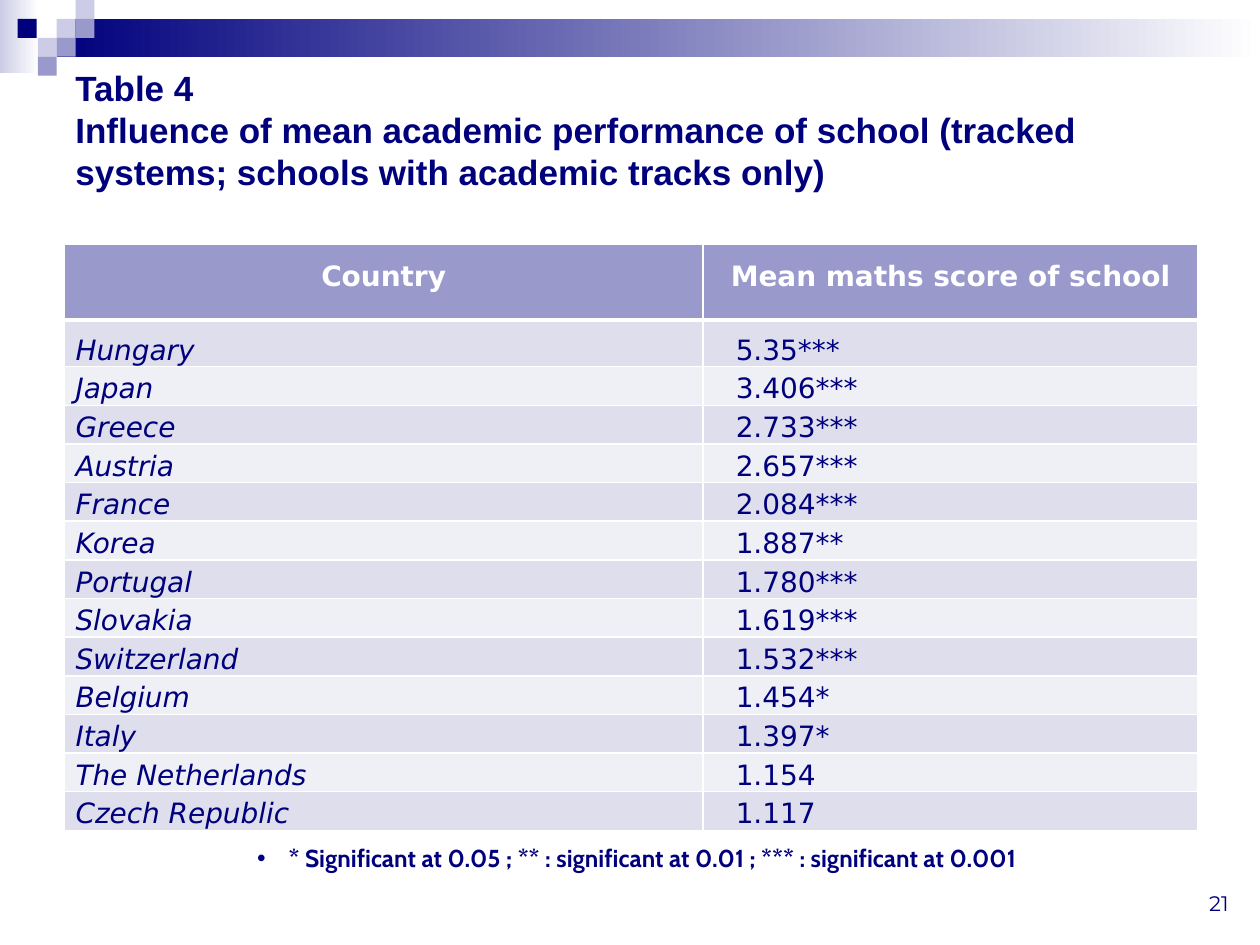
import pptx
import pptx.dml.color
import pptx.enum.shapes
import pptx.enum.text
import pptx.oxml
import pptx.oxml.ns
import pptx.util

Inches = pptx.util.Inches
Pt = pptx.util.Pt
ALIGN = pptx.enum.text.PP_ALIGN
ANCHOR = pptx.enum.text.MSO_ANCHOR

COLORS = {
    "navy": "00007D",
    "violet": "9999CC",
    "lilac": "CCCCE6",
    "white": "FFFFFF",
    "band_dark": "DEDEEC",
    "band_light": "EFEFF6",
}

SQUARES = [
    (0.45, 0.15, "lilac"),
    (0.6, 0, "lilac"),
    (0.6, 0.15, "violet"),
    (0.3, 0.3, "lilac"),
    (0.14, 0.15, "navy"),
    (0.45, 0.3, "violet"),
    (0.3, 0.45, "violet"),
]

TITLE = [
    "Table 4 ",
    "Influence of mean academic performance of school (tracked systems; "
    "schools with academic tracks only)",
]

HEADERS = ["Country", "Mean maths score of school"]

SCORES = [
    ("Hungary", "5.35***"),
    ("Japan", "3.406***"),
    ("Greece", "2.733***"),
    ("Austria", "2.657***"),
    ("France", "2.084***"),
    ("Korea", "1.887**"),
    ("Portugal", "1.780***"),
    ("Slovakia", "1.619***"),
    ("Switzerland", "1.532***"),
    ("Belgium", "1.454*"),
    ("Italy", "1.397*"),
    ("The Netherlands", "1.154"),
    ("Czech Republic", "1.117"),
]

NOTE = "* Significant at 0.05 ; ** : significant at 0.01 ; *** : significant at 0.001"


def rgb(name):
    return pptx.dml.color.RGBColor.from_string(COLORS[name])


def add_rect(s, x, y, w, h, color, fade_to=None):
    sp = s.shapes.add_shape(
        pptx.enum.shapes.MSO_SHAPE.RECTANGLE, Inches(x), Inches(y), Inches(w), Inches(h)
    )
    sp.shadow.inherit = False
    sp.line.fill.background()
    if fade_to:
        sp.fill.gradient()
        sp.fill.gradient_angle = 0
        for stop, name in zip(sp.fill.gradient_stops, (color, fade_to)):
            stop.color.rgb = rgb(name)
    else:
        sp.fill.solid()
        sp.fill.fore_color.rgb = rgb(color)


def add_run(p, text, size, font, color="navy", bold=False, italic=False):
    r = p.add_run()
    r.text = text
    r.font.size = Pt(size)
    r.font.name = font
    r.font.color.rgb = rgb(color)
    r.font.bold = bold
    r.font.italic = italic


def add_text_box(s, x, y, w, h, anchor=ANCHOR.TOP, align=ALIGN.LEFT):
    tf = s.shapes.add_textbox(Inches(x), Inches(y), Inches(w), Inches(h)).text_frame
    tf.word_wrap = True
    tf.vertical_anchor = anchor
    p = tf.paragraphs[0]
    p.alignment = align
    return tf, p


def set_indent(p, left, first=0):
    pPr = p._p.get_or_add_pPr()
    pPr.set("marL", str(Inches(left)))
    pPr.set("indent", str(Inches(first)))
    return pPr


def add_bullet(p):
    pPr = set_indent(p, 0.25, -0.25)
    ns = pptx.oxml.ns.nsdecls("a")
    pPr.append(pptx.oxml.parse_xml(f'<a:buFont {ns} typeface="Arial"/>'))
    pPr.append(pptx.oxml.parse_xml(f'<a:buChar {ns} char="•"/>'))


def set_borders(cell, top=1, bottom=1):
    tcPr = cell._tc.get_or_add_tcPr()
    ns = pptx.oxml.ns.nsdecls("a")
    widths = {"lnL": 1, "lnR": 1, "lnT": top, "lnB": bottom}
    for i, (tag, width) in enumerate(widths.items()):
        tcPr.insert(i, pptx.oxml.parse_xml(
            f'<a:{tag} {ns} w="{Pt(width)}"><a:solidFill>'
            f'<a:srgbClr val="{COLORS["white"]}"/></a:solidFill></a:{tag}>'
        ))


def fill_cell(cell, text, fill, align, spacing, anchor, **font):
    cell.fill.solid()
    cell.fill.fore_color.rgb = rgb(fill)
    cell.margin_left = cell.margin_right = Inches(0.09)
    cell.margin_top = cell.margin_bottom = 0
    cell.vertical_anchor = anchor
    p = cell.text_frame.paragraphs[0]
    p.alignment = align
    p.line_spacing = spacing
    add_run(p, text, 16, "DejaVu Sans", **font)
    return p


def add_score_table(s):
    heights = [0.6, 0.37] + [0.29] * (len(SCORES) - 1)
    table = s.shapes.add_table(
        len(heights), 2, Inches(0.51), Inches(1.94), Inches(9), Inches(sum(heights))
    ).table
    for col, width in zip(table.columns, (5.07, 3.93)):
        col.width = Inches(width)
    for row, height in zip(table.rows, heights):
        row.height = Inches(height)
    for c, text in enumerate(HEADERS):
        cell = table.cell(0, c)
        fill_cell(cell, text, "violet", ALIGN.CENTER, 1.5, ANCHOR.TOP,
                  color="white", bold=True)
        set_borders(cell, bottom=3)
    for i, score in enumerate(SCORES, 1):
        band = "band_dark" if i % 2 else "band_light"
        for c, text in enumerate(score):
            cell = table.cell(i, c)
            p = fill_cell(cell, text, band, ALIGN.LEFT, 1.15, ANCHOR.BOTTOM, italic=c == 0)
            if c == 1:
                set_indent(p, 0.17)
            set_borders(cell, top=3 if i == 1 else 1)


def add_title(s):
    tf, p = add_text_box(s, 0.5, 0.5, 9, 1.36)
    tf.margin_top = Inches(0.03)
    for i, line in enumerate(TITLE):
        if i:
            p.add_line_break()
        add_run(p, line, 20, "Arial", bold=True)


def main():
    prs = pptx.Presentation()
    prs.slide_width, prs.slide_height = Inches(10), Inches(7.5)
    s = prs.slides.add_slide(prs.slide_layouts[6])

    add_rect(s, 0, 0, 0.31, 0.58, "lilac", "white")
    add_rect(s, 0.45, 0.15, 9.55, 0.3, "navy", "white")
    for x, y, color in SQUARES:
        add_rect(s, x, y, 0.15, 0.15, color)

    add_title(s)
    add_score_table(s)

    tf, p = add_text_box(s, 0.98, 6.64, 8.15, 0.34, align=ALIGN.CENTER)
    add_bullet(p)
    add_run(p, NOTE, 14, "Cabin", bold=True)

    tf, p = add_text_box(s, 7.52, 6.82, 2.33, 0.5, ANCHOR.BOTTOM, ALIGN.RIGHT)
    add_run(p, "21", 12, "Montserrat")

    prs.save("out.pptx")


if __name__ == "__main__":
    main()
